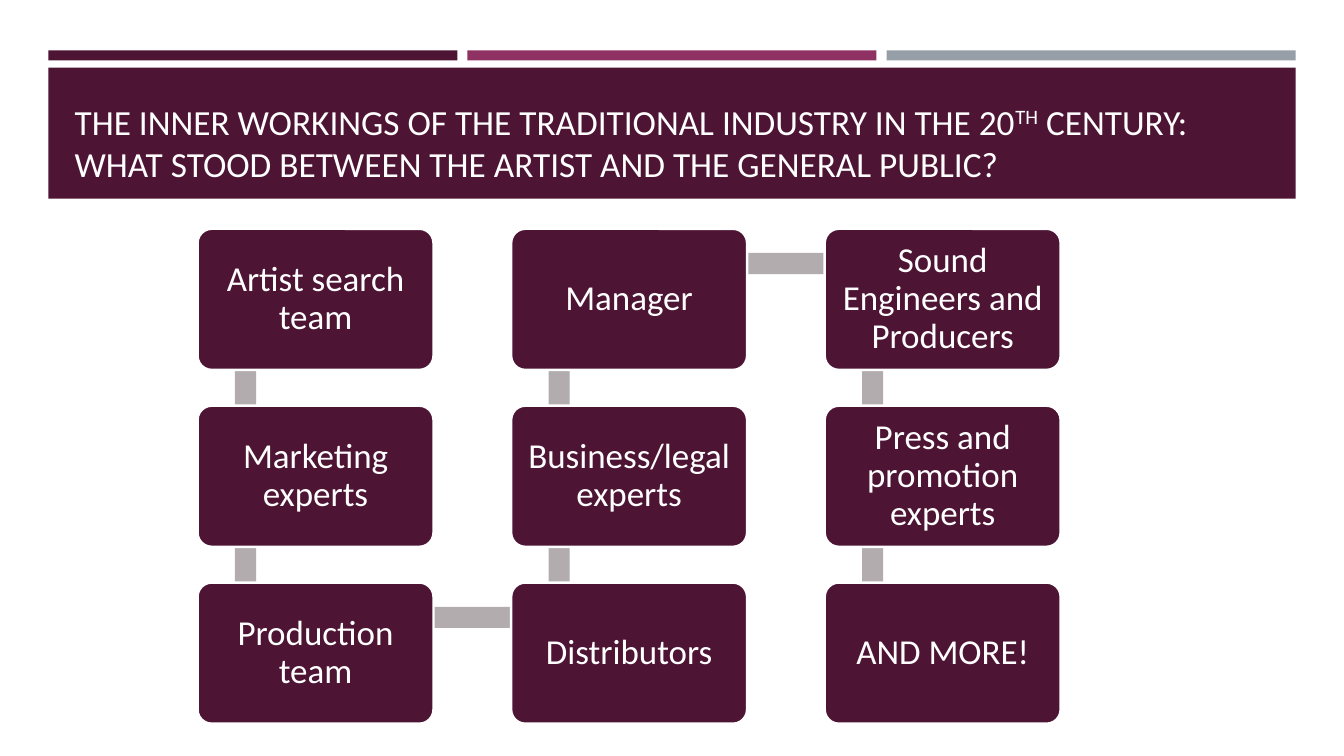
from pptx import Presentation
from pptx.dml.color import RGBColor
from pptx.enum.shapes import MSO_SHAPE as Preset
from pptx.enum.text import MSO_ANCHOR as Anchor, MSO_AUTO_SIZE as AutoSize, PP_ALIGN as Align
from pptx.util import Inches, Pt

PLUM = RGBColor(0x4D, 0x14, 0x34)
MAGENTA = RGBColor(0x90, 0x31, 0x63)
SLATE = RGBColor(0x96, 0x9F, 0xA7)
GREY = RGBColor(0xB2, 0xAC, 0xAE)
WHITE = RGBColor(0xFF, 0xFF, 0xFF)
FONT = "Calibri"

TITLE_PARTS = [
    ("THE INNER WORKINGS OF THE TRADITIONAL INDUSTRY IN THE 20", False),
    ("TH", True),
    (" CENTURY: WHAT STOOD BETWEEN THE ARTIST AND THE GENERAL PUBLIC?", False),
]
STEPS = [
    "Artist search team", "Marketing experts", "Production team",
    "Distributors", "Business/legal experts", "Manager",
    "Sound Engineers and Producers", "Press and promotion experts", "AND MORE!",
]
ROWS = 3
STEP_WIDTH, STEP_HEIGHT = 2.34, 1.4
COLUMN_PITCH, ROW_PITCH = 3.11, 1.755
BAR = 0.21


def add_block(slide, preset, left, top, width, height, color):
    shape = slide.shapes.add_shape(
        preset, Inches(left), Inches(top), Inches(width), Inches(height))
    shape.shadow.inherit = False
    shape.fill.solid()
    shape.fill.fore_color.rgb = color
    shape.line.fill.background()
    return shape


def format_font(font, size):
    font.name = FONT
    font.size = Pt(size)
    font.color.rgb = WHITE


def add_header(slide, left, top, width):
    gap = 0.1
    strip_width = (width - 2 * gap) / 3
    for index, color in enumerate((PLUM, MAGENTA, SLATE)):
        strip_left = left + index * (strip_width + gap)
        add_block(slide, Preset.RECTANGLE, strip_left, top, strip_width, 0.1, color)
    add_block(slide, Preset.RECTANGLE, left, top + 0.17, width, 1.3, PLUM)

    title = slide.shapes.title
    slide.shapes._spTree.append(title._element)
    title.left, title.top = Inches(left + 0.16), Inches(top + 0.27)
    title.width, title.height = Inches(width - 0.31), Inches(1.11)
    text_frame = title.text_frame
    text_frame.auto_size = AutoSize.NONE
    text_frame.word_wrap = True
    text_frame.vertical_anchor = Anchor.BOTTOM
    paragraph = text_frame.paragraphs[0]
    paragraph.alignment = Align.LEFT
    for text, raised in TITLE_PARTS:
        run = paragraph.add_run()
        run.text = text
        format_font(run.font, 25.2)
        if raised:
            run._r.get_or_add_rPr().set("baseline", "30000")


def add_step(slide, left, top, text):
    shape = add_block(slide, Preset.ROUNDED_RECTANGLE, left, top, STEP_WIDTH, STEP_HEIGHT, PLUM)
    shape.adjustments[0] = 0.1
    shape.line.color.rgb = WHITE
    shape.line.width = Pt(1.75)
    text_frame = shape.text_frame
    text_frame.word_wrap = True
    text_frame.vertical_anchor = Anchor.MIDDLE
    text_frame.margin_left = text_frame.margin_right = Inches(0.11)
    text_frame.margin_top = text_frame.margin_bottom = Inches(0.1)
    text_frame.text = text
    paragraph = text_frame.paragraphs[0]
    paragraph.alignment = Align.CENTER
    paragraph.line_spacing = 0.9
    format_font(paragraph.runs[0].font, 25)


def add_winding_process(slide, left, top):
    places = []
    for index in range(len(STEPS)):
        column, row = divmod(index, ROWS)
        if column % 2:
            row = ROWS - 1 - row
        places.append((left + column * COLUMN_PITCH, top + row * ROW_PITCH))

    for (x, y), (next_x, next_y) in zip(places, places[1:]):
        if x == next_x:
            add_block(slide, Preset.RECTANGLE, x + 0.37, min(y, next_y) + 0.35,
                      BAR, ROW_PITCH, GREY)
        else:
            add_block(slide, Preset.RECTANGLE, x + 0.47, y + 0.24,
                      COLUMN_PITCH, BAR, GREY)
    for (x, y), text in zip(places, STEPS):
        add_step(slide, x, y, text)


def main():
    presentation = Presentation()
    presentation.slide_width = Inches(13.33)
    presentation.slide_height = Inches(7.5)
    slide = presentation.slides.add_slide(presentation.slide_layouts[5])
    add_header(slide, 0.48, 0.5, 12.37)
    add_winding_process(slide, 1.96, 2.27)
    presentation.save("out.pptx")


if __name__ == "__main__":
    main()
